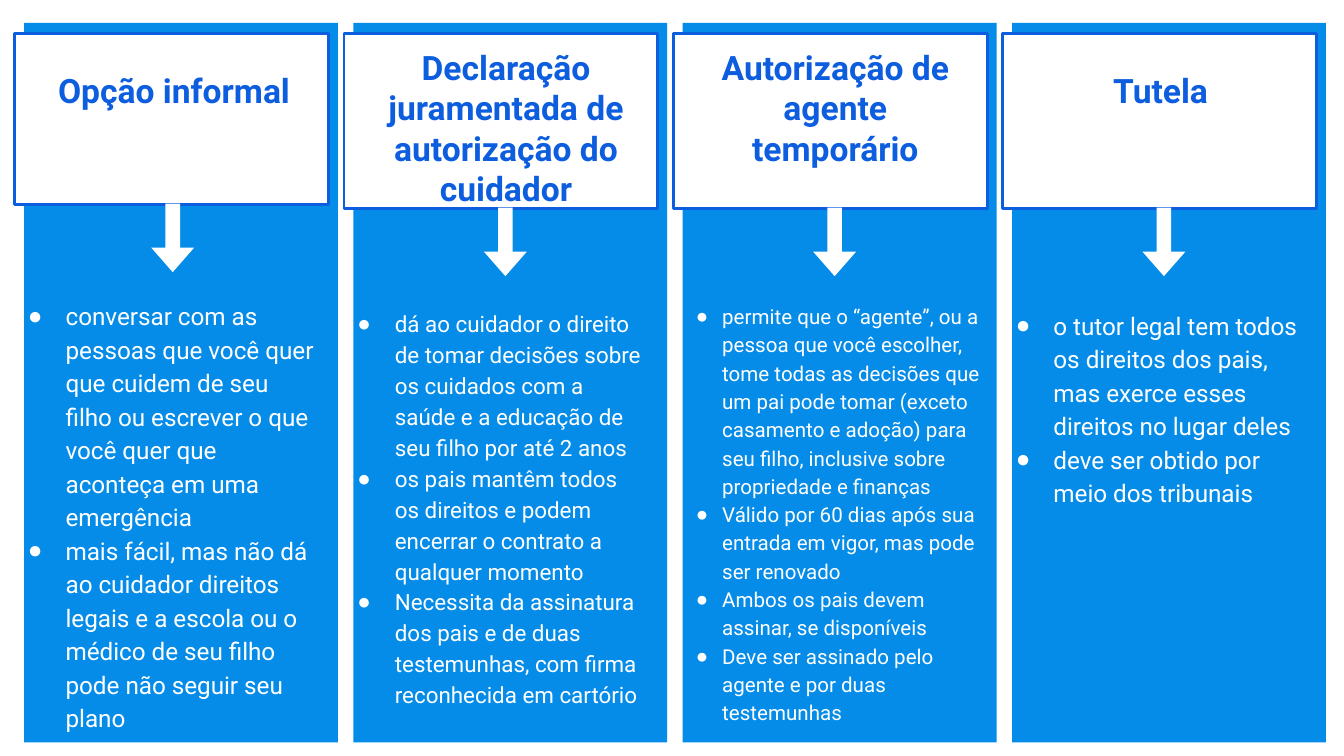
from dataclasses import dataclass

from lxml import etree
from pptx import Presentation
from pptx import util as u
from pptx.dml.color import RGBColor
from pptx.enum import shapes, text
from pptx.oxml import ns

PX = 4572  # EMU in one px, at 200 px to the inch


@dataclass(frozen=True)
class Theme:
    font: str = "Roboto"
    bullet_font: str = "Arial"
    panel: str = "058CE8"
    accent: str = "0D5DDF"
    light: str = "FFFFFF"
    heading_size: int = 18
    border: float = 1.5
    line_spacing: float = 1.15
    inset: int = 20


@dataclass(frozen=True)
class Column:
    heading: str
    items: tuple
    size: int
    heading_offset: tuple = (18, 16)
    header_height: int = 260
    arrow_left: int = 175
    list_offset: tuple = (-14, 402)
    list_height: int = 642
    indent: int = 56


@dataclass(frozen=True)
class Box:
    left: int
    top: int
    width: int
    height: int

    def inner(self, left, top, width, height):
        return Box(self.left + left, self.top + top, width, height)

    def emu(self):
        return [u.Emu(side * PX) for side in (self.left, self.top, self.width, self.height)]


THEME = Theme()
SLIDE_SIZE = (2000, 1125)
FIRST_PANEL = Box(36, 34, 467, 1071)
COLUMN_STEP = 490

COLUMNS = (
    Column(
        "Opção informal",
        (
            "conversar com as pessoas que você quer que cuidem de seu filho ou "
            "escrever o que você quer que aconteça em uma emergência",
            "mais fácil, mas não dá ao cuidador direitos legais e a escola ou o "
            "médico de seu filho pode não seguir seu plano",
        ),
        size=13, heading_offset=(14, 50), header_height=254, arrow_left=170,
        list_offset=(-14, 388), list_height=658,
    ),
    Column(
        "Declaração juramentada de autorização do cuidador",
        (
            "dá ao cuidador o direito de tomar decisões sobre os cuidados com a "
            "saúde e a educação de seu filho por até 2 anos",
            "os pais mantêm todos os direitos e podem encerrar o contrato a "
            "qualquer momento",
            "Necessita da assinatura dos pais e de duas testemunhas, com firma "
            "reconhecida em cartório",
        ),
        size=12,
    ),
    Column(
        "Autorização de agente temporário",
        (
            "permite que o “agente”, ou a pessoa que você escolher, tome todas as "
            "decisões que um pai pode tomar (exceto casamento e adoção) para seu "
            "filho, inclusive sobre propriedade e finanças",
            "Válido por 60 dias após sua entrada em vigor, mas pode ser renovado",
            "Ambos os pais devem assinar, se disponíveis",
            "Deve ser assinado pelo agente e por duas testemunhas",
        ),
        size=11, list_offset=(0, 393), list_height=646, indent=39,
    ),
    Column(
        "Tutela",
        (
            "o tutor legal tem todos os direitos dos pais, mas exerce esses "
            "direitos no lugar deles",
            "deve ser obtido por meio dos tribunais",
        ),
        size=13, heading_offset=(12, 50),
    ),
)


def add_filled(group, kind, box, fill, line=None):
    shape = group.shapes.add_shape(kind, *box.emu())
    shape.shadow.inherit = False
    shape.fill.solid()
    shape.fill.fore_color.rgb = RGBColor.from_string(fill)
    if line:
        shape.line.color.rgb = RGBColor.from_string(line)
        shape.line.width = u.Pt(THEME.border)
    else:
        shape.line.fill.background()
    return shape


def add_text_frame(group, box):
    frame = group.shapes.add_textbox(*box.emu()).text_frame
    frame.word_wrap = True
    frame.auto_size = text.MSO_AUTO_SIZE.NONE
    frame.vertical_anchor = text.MSO_ANCHOR.TOP
    inset = u.Emu(THEME.inset * PX)
    frame.margin_left = frame.margin_top = inset
    frame.margin_right = frame.margin_bottom = inset
    return frame


def format_runs(paragraph, size, color, bold=False):
    for run in paragraph.runs:
        run.font.name = THEME.font
        run.font.size = u.Pt(size)
        run.font.bold = bold
        run.font.color.rgb = RGBColor.from_string(color)


def add_bullet(paragraph, indent):
    properties = paragraph._p.get_or_add_pPr()
    properties.set("marL", str(indent * PX))
    properties.set("indent", str(-indent * PX))
    color = etree.SubElement(properties, ns.qn("a:buClr"))
    etree.SubElement(color, ns.qn("a:srgbClr"), val=THEME.light)
    etree.SubElement(properties, ns.qn("a:buFont"), typeface=THEME.bullet_font)
    etree.SubElement(properties, ns.qn("a:buChar"), char="●")


def add_heading(group, box, heading):
    paragraph = add_text_frame(group, box).paragraphs[0]
    paragraph.text = heading
    paragraph.alignment = text.PP_ALIGN.CENTER
    format_runs(paragraph, THEME.heading_size, THEME.accent, bold=True)


def add_down_arrow(group, box):
    """Turn a right arrow by a quarter; box is its place before the turn."""
    arrow = add_filled(group, shapes.MSO_SHAPE.RIGHT_ARROW, box, THEME.light)
    arrow.rotation = 90
    arrow.adjustments[0] = 0.34
    arrow.adjustments[1] = 0.57


def add_list(group, box, column):
    frame = add_text_frame(group, box)
    frame.text = "\n".join(column.items)
    for paragraph in frame.paragraphs:
        paragraph.line_spacing = THEME.line_spacing
        add_bullet(paragraph, column.indent)
        format_runs(paragraph, column.size, THEME.light)


def add_column(slide, panel, column):
    group = slide.shapes.add_group_shape()
    rectangle = shapes.MSO_SHAPE.RECTANGLE
    add_filled(group, rectangle, panel, THEME.panel)
    header = panel.inner(-14, 16, panel.width, column.header_height)
    add_filled(group, rectangle, header, THEME.light, THEME.accent)
    add_heading(group, panel.inner(*column.heading_offset, 418, 178), column.heading)
    arrow_top = 34 + column.header_height
    add_down_arrow(group, panel.inner(column.arrow_left, arrow_top, 102, 64))
    list_box = panel.inner(*column.list_offset, panel.width, column.list_height)
    add_list(group, list_box, column)


def main():
    presentation = Presentation()
    presentation.slide_width, presentation.slide_height = (
        u.Emu(side * PX) for side in SLIDE_SIZE
    )
    slide = presentation.slides.add_slide(presentation.slide_layouts[6])
    for index, column in enumerate(COLUMNS):
        panel = FIRST_PANEL.inner(
            index * COLUMN_STEP, 0, FIRST_PANEL.width, FIRST_PANEL.height
        )
        add_column(slide, panel, column)
    presentation.save("out.pptx")


if __name__ == "__main__":
    main()
